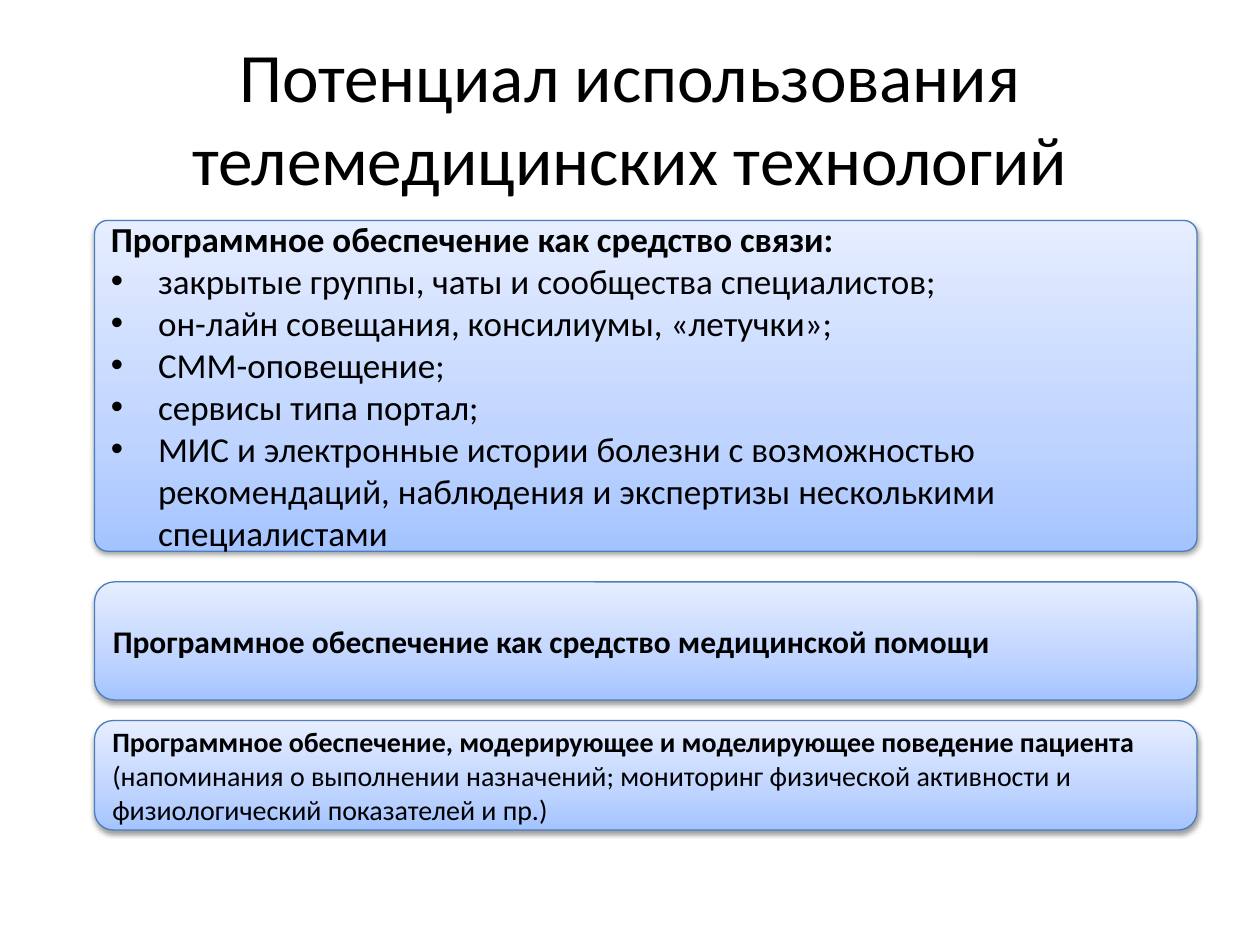
"""Build a slide on the potential of telemedicine technologies."""
from lxml import etree
from pptx import Presentation
from pptx.dml.color import RGBColor
from pptx.enum.shapes import MSO_SHAPE
from pptx.enum.text import MSO_ANCHOR, PP_ALIGN
from pptx.oxml import parse_xml
from pptx.oxml.ns import nsdecls, qn
from pptx.util import Pt

ROUNDED = MSO_SHAPE.ROUNDED_RECTANGLE
MIDDLE = MSO_ANCHOR.MIDDLE
LEFT, CENTER = PP_ALIGN.LEFT, PP_ALIGN.CENTER

FONT = "Calibri"
COLORS = {"text": "000000", "line": "4B7EBC", "shadow": "000000",
          "bottom": "A4C4FF", "middle": "BFD4FF", "top": "E6EEFF"}
GRADIENT = [(0, "bottom"), (35, "middle"), (100, "top")]

TITLE = "Потенциал использования телемедицинских технологий"
TITLE_BOX = (36, 21.6, 648, 90)
PANEL_LEFT, PANEL_WIDTH = 54, 630
BULLET_INDENT = 27

PANELS = [
    {"top": 126, "height": 189, "size": 20, "radius": 0.04,
     "heading": "Программное обеспечение как средство связи:",
     "bullets": [
         "закрытые группы, чаты и сообщества специалистов;",
         "он-лайн совещания, консилиумы, «летучки»;",
         "СММ-оповещение;",
         "сервисы типа портал;",
         "МИС и электронные истории болезни с возможностью рекомендаций, "
         "наблюдения и экспертизы несколькими специалистами",
     ]},
    {"top": 332.5, "height": 67.5, "size": 18, "radius": 0.17,
     "heading": "Программное обеспечение как средство медицинской помощи"},
    {"top": 411.75, "height": 62.5, "size": 16, "radius": 0.17,
     "heading": "Программное обеспечение, модерирующее и моделирующее поведение пациента",
     "detail": " (напоминания о выполнении назначений; мониторинг физической "
               "активности и физиологический показателей и пр.)"},
]


def write(paragraph, text, size, bold=False, align=LEFT, bullet=False):
    paragraph.alignment = align
    run = paragraph.add_run()
    run.text = text
    run.font.name, run.font.size, run.font.bold = FONT, Pt(size), bold
    run.font.color.rgb = RGBColor.from_string(COLORS["text"])
    if bullet:
        properties = paragraph._p.get_or_add_pPr()
        properties.set("marL", str(Pt(BULLET_INDENT)))
        properties.set("indent", str(-Pt(BULLET_INDENT)))
        etree.SubElement(properties, qn("a:buFont")).set("typeface", "Arial")
        etree.SubElement(properties, qn("a:buChar")).set("char", "•")


def paint(panel):
    panel.fill.gradient()
    panel.fill.gradient_angle = 90
    stops = panel._element.spPr.find(qn("a:gradFill")).find(qn("a:gsLst"))
    stops[:] = [parse_xml(
        f'<a:gs {nsdecls("a")} pos="{percent * 1000}">'
        f'<a:srgbClr val="{COLORS[name]}"/></a:gs>') for percent, name in GRADIENT]
    panel.line.color.rgb = RGBColor.from_string(COLORS["line"])
    panel.line.width = Pt(0.75)
    panel.shadow.inherit = False
    panel._element.spPr.find(qn("a:effectLst")).append(parse_xml(
        f'<a:outerShdw {nsdecls("a")} blurRad="{Pt(3.1)}" dist="{Pt(1.6)}" '
        f'dir="5400000" rotWithShape="0"><a:srgbClr val="{COLORS["shadow"]}">'
        '<a:alpha val="38000"/></a:srgbClr></a:outerShdw>'))


def main():
    deck = Presentation()
    deck.slide_width, deck.slide_height = Pt(720), Pt(540)
    shapes = deck.slides.add_slide(deck.slide_layouts[6]).shapes

    title = shapes.add_textbox(*map(Pt, TITLE_BOX)).text_frame
    title.word_wrap, title.vertical_anchor = True, MIDDLE
    write(title.paragraphs[0], TITLE, 39.6, align=CENTER)

    for content in PANELS:
        panel = shapes.add_shape(ROUNDED, Pt(PANEL_LEFT), Pt(content["top"]),
                                 Pt(PANEL_WIDTH), Pt(content["height"]))
        panel.adjustments[0] = content["radius"]
        paint(panel)
        frame = panel.text_frame
        frame.word_wrap, frame.vertical_anchor = True, MIDDLE
        size = content["size"]
        write(frame.paragraphs[0], content["heading"], size, bold=True)
        if "detail" in content:
            write(frame.paragraphs[0], content["detail"], size)
        for item in content.get("bullets", []):
            write(frame.add_paragraph(), item, size, bullet=True)

    deck.save("out.pptx")


if __name__ == "__main__":
    main()
